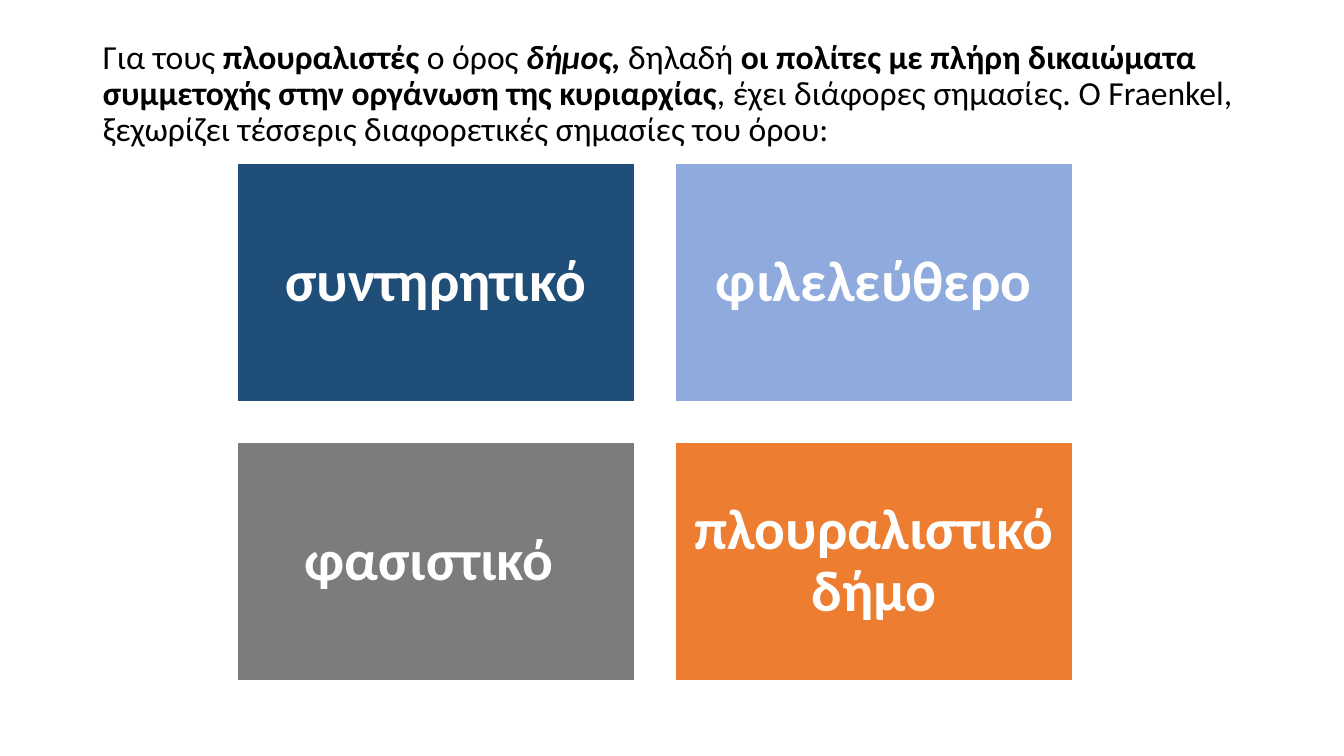
from pptx import Presentation
from pptx import util as u
from pptx.dml.color import RGBColor
from pptx.enum import shapes, text

SLIDE_WIDTH, SLIDE_HEIGHT = 1344, 756
SCALE = u.Inches(40 / 3) / SLIDE_WIDTH
FONT = "Calibri"
TILE_LEFT, TILE_TOP = 237, 163
TILE_WIDTH, TILE_HEIGHT, TILE_GAP = 398, 239, 40
INTRO = [
    ("Για τους ", False, False),
    ("πλουραλιστές", True, False),
    (" ο όρος ", False, False),
    ("δήμος, ", True, True),
    ("δηλαδή ", False, False),
    ("οι πολίτες με πλήρη δικαιώματα συμμετοχής στην οργάνωση της κυριαρχίας", True, False),
    (", έχει διάφορες σημασίες. Ο Fraenkel, ξεχωρίζει τέσσερις "
     "διαφορετικές σημασίες του όρου:", False, False),
]
TILES = [
    ("συντηρητικό", "1F4E79"),
    ("φιλελεύθερο", "8FAADC"),
    ("φασιστικό ", "7C7C7C"),
    ("πλουραλιστικό δήμο", "ED7D31"),
]


def px(length):
    """Turn a length in px into EMU."""
    return u.Emu(round(length * SCALE))


def color(code):
    """Turn a hex string into a colour."""
    return RGBColor.from_string(code)


def set_frame(frame, anchor, side, vertical):
    """Set wrapping, anchor and margins of a text frame."""
    frame.word_wrap = True
    frame.vertical_anchor = anchor
    frame.margin_left = frame.margin_right = px(side)
    frame.margin_top = frame.margin_bottom = px(vertical)


def add_run(para, words, size, code, bold=False, italic=False):
    """Append one formatted run to a paragraph."""
    span = para.add_run()
    span.text = words
    span.font.name = FONT
    span.font.size = u.Pt(size)
    span.font.bold = bold
    span.font.italic = italic
    span.font.color.rgb = color(code)


def add_intro(page):
    """Add the introductory sentence above the tiles."""
    box = page.shapes.add_textbox(px(93), px(40), px(1159), px(110))
    set_frame(box.text_frame, text.MSO_ANCHOR.TOP, 10, 0)
    para = box.text_frame.paragraphs[0]
    para.line_spacing = 0.9
    for words, bold, italic in INTRO:
        add_run(para, words, 24, "000000", bold, italic)


def add_tile(page, left, top, label, fill):
    """Add one coloured rectangle with a centred label."""
    tile = page.shapes.add_shape(shapes.MSO_SHAPE.RECTANGLE, px(left), px(top),
                                 px(TILE_WIDTH), px(TILE_HEIGHT))
    tile.shadow.inherit = False
    tile.fill.solid()
    tile.fill.fore_color.rgb = color(fill)
    tile.line.color.rgb = color("FFFFFF")
    tile.line.width = u.Pt(1)
    set_frame(tile.text_frame, text.MSO_ANCHOR.MIDDLE, 17, 17)
    para = tile.text_frame.paragraphs[0]
    para.alignment = text.PP_ALIGN.CENTER
    para.line_spacing = 0.9
    add_run(para, label, 41, "FFFFFF", bold=True)


def main():
    """Build the slide and save it."""
    deck = Presentation()
    deck.slide_width, deck.slide_height = px(SLIDE_WIDTH), px(SLIDE_HEIGHT)
    page = deck.slides.add_slide(deck.slide_layouts[6])
    add_intro(page)
    for index, (label, fill) in enumerate(TILES):
        row, column = divmod(index, 2)
        add_tile(page, TILE_LEFT + column * (TILE_WIDTH + TILE_GAP),
                 TILE_TOP + row * (TILE_HEIGHT + TILE_GAP), label, fill)
    deck.save("out.pptx")


if __name__ == "__main__":
    main()
